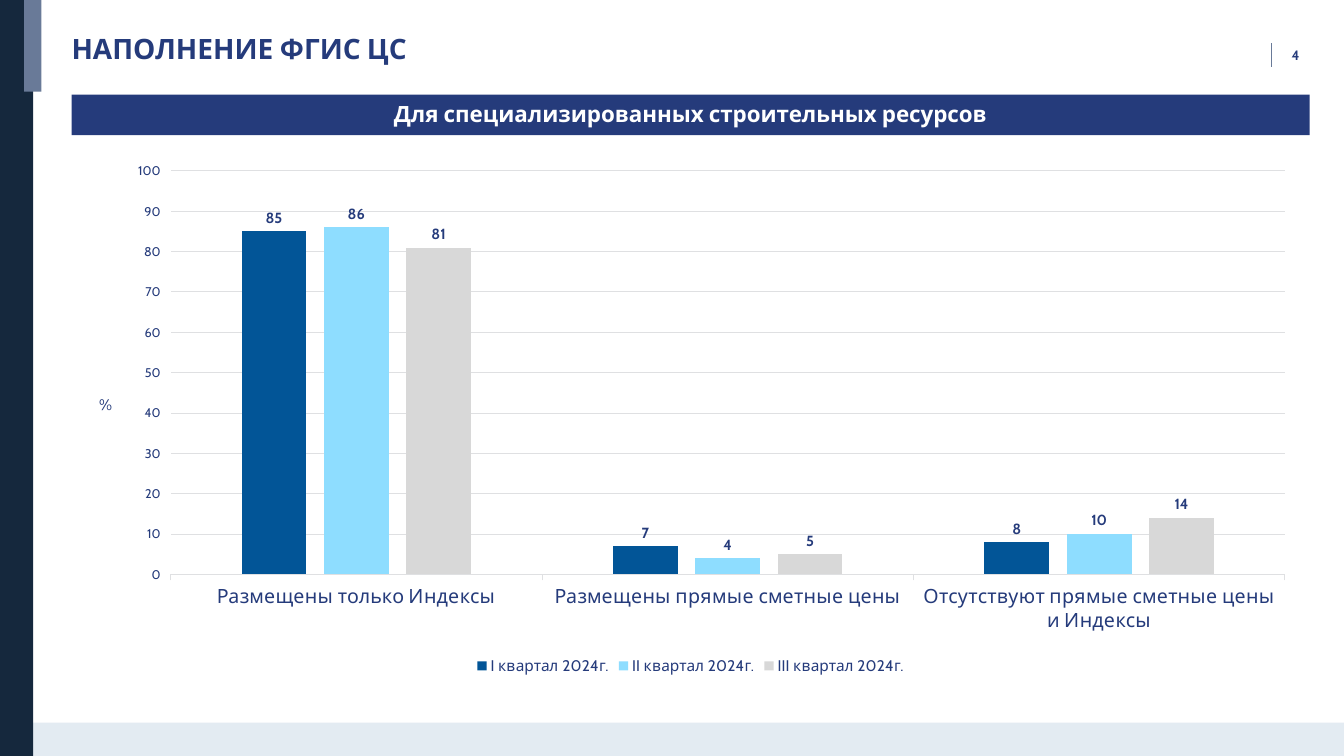
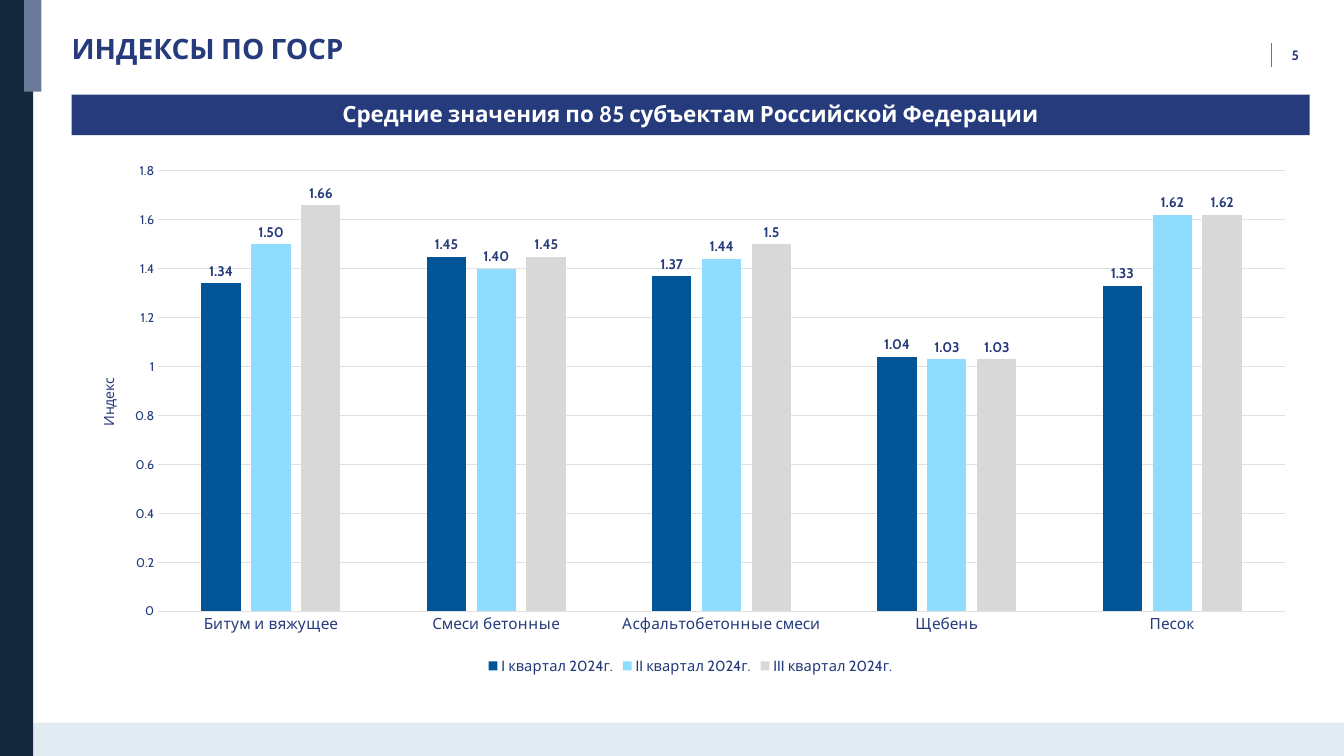
from lxml import etree
from pptx import Presentation
from pptx import util as u
from pptx.chart.data import CategoryChartData
from pptx.dml.color import RGBColor
from pptx.enum import chart as ch, shapes, text
from pptx.oxml.ns import qn

FONT = "Cabin"
COLORS = {
    "navy": "253B7B", "rail": "15283D", "slate": "697A98", "footer": "E3EBF2",
    "white": "FFFFFF", "grid": "DFE0E2", "ink": "303236",
}
QUARTERS = {
    "I квартал 2024г.": "025597",
    "II квартал 2024г.": "8EDDFF",
    "III квартал 2024г.": "D8D8D8",
}

# Layout in inches: left, top, width, height
WIDTH, HEIGHT = 13.33, 7.5
LEFT, CONTENT_WIDTH = 0.71, 12.28
RAIL_WIDTH, FOOTER_HEIGHT = 0.33, 0.33
TITLE_BOX = (LEFT, 0.31, 9.64, 0.34)
BAND_BOX = (LEFT, 0.94, CONTENT_WIDTH, 0.4)
CHART_BOX = (LEFT, 1.54, CONTENT_WIDTH, 5.2)
NUMBER_BOX = (12.68, 0.46, 0.68, 0.17)

SLIDES = [
    {
        "title": "НАПОЛНЕНИЕ ФГИС ЦС",
        "heading": "Для специализированных строительных ресурсов",
        "number": 4,
        "categories": ["Размещены только Индексы", "Размещены прямые сметные цены",
                       "Отсутствуют прямые сметные цены и Индексы"],
        "values": [(85, 7, 8), (86, 4, 10), (81, 5, 14)],
        "formats": ["General"] * 3,
        "maximum": 100, "step": 10, "tick": ch.XL_TICK_MARK.OUTSIDE,
        "category_size": 14, "legend_size": 11, "label_size": 10.5,
        "axis_title": "%", "axis_title_size": 11, "axis_title_turn": 0,
        "axis_title_place": {"x": 0.02, "y": 0.45},
        "plot": {"x": 0.08, "y": 0.03, "w": 0.9, "h": 0.77},
    },
    {
        "title": "ИНДЕКСЫ ПО ГОСР",
        "heading": "Средние значения по 85 субъектам Российской Федерации",
        "number": 5,
        "categories": ["Битум и вяжущее", "Смеси бетонные",
                       "Асфальтобетонные смеси", "Щебень", "Песок"],
        "values": [(1.34, 1.45, 1.37, 1.04, 1.33), (1.5, 1.4, 1.44, 1.03, 1.62),
                   (1.66, 1.45, 1.5, 1.03, 1.62)],
        "formats": ["General", "0.00", "General"],
        "maximum": 1.8, "step": 0.2, "tick": ch.XL_TICK_MARK.NONE,
        "category_size": 11, "legend_size": 10.5, "label_size": 10,
        "axis_title": "Индекс", "axis_title_size": 10, "axis_title_turn": -90,
        "axis_title_place": {"x": 0.02, "y": 0.42},
        "plot": {"x": 0.07, "y": 0.03, "w": 0.91, "h": 0.84},
    },
]


def rgb(name):
    return RGBColor.from_string(COLORS.get(name, name))


def inches(box):
    return [u.Inches(length) for length in box]


def style_font(font, size, color="navy", bold=False):
    font.name = FONT
    font.size = u.Pt(size)
    font.bold = bold
    font.color.rgb = rgb(color)


def add_rectangle(slide, box, color):
    shape = slide.shapes.add_shape(shapes.MSO_SHAPE.RECTANGLE, *inches(box))
    shape.shadow.inherit = False
    shape.fill.solid()
    shape.fill.fore_color.rgb = rgb(color)
    shape.line.fill.background()
    return shape


def write_text(shape, words, size, color="navy", inset=0.0):
    """Put one bold line in a shape and return its paragraph."""
    frame = shape.text_frame
    frame.word_wrap = True
    frame.margin_left = frame.margin_right = u.Inches(inset)
    frame.margin_top = frame.margin_bottom = 0
    paragraph = frame.paragraphs[0]
    paragraph.text = words
    style_font(paragraph.font, size, color, bold=True)
    return paragraph


def add_frame(slide, number):
    """Footer, side rail with its tab, and the page number with its divider."""
    add_rectangle(slide, (0, HEIGHT - FOOTER_HEIGHT, WIDTH, FOOTER_HEIGHT), "footer")
    add_rectangle(slide, (0, 0, RAIL_WIDTH, HEIGHT), "rail")
    add_rectangle(slide, (0.24, 0, 0.17, 0.91), "slate")

    divider = slide.shapes.add_connector(
        shapes.MSO_CONNECTOR.STRAIGHT, *inches((12.61, 0.43, 12.61, 0.66)))
    divider.line.color.rgb = rgb("slate")
    divider.line.width = u.Pt(1)
    etree.SubElement(divider._element.spPr, qn("a:effectLst"))

    page_number = slide.shapes.add_textbox(*inches(NUMBER_BOX))
    write_text(page_number, str(number), 9.7, inset=0.13)
    page_number.text_frame.vertical_anchor = text.MSO_ANCHOR.MIDDLE


def add_title(slide, words, box):
    write_text(slide.shapes.add_textbox(*inches(box)), words, 20)


def add_heading_band(slide, words, box):
    band = add_rectangle(slide, box, "navy")
    paragraph = write_text(band, words, 16, "white", inset=0.18)
    paragraph.alignment = text.PP_ALIGN.CENTER
    paragraph.line_spacing = u.Pt(17.9)
    band.text_frame.vertical_anchor = text.MSO_ANCHOR.MIDDLE


def set_layout(parent, shares, inner=False):
    """Place a chart part by shares of the chart's size."""
    layout = parent.find(qn("c:layout"))
    if layout is None:
        layout = etree.Element(qn("c:layout"))
        parent.insert(0, layout)
    for child in list(layout):
        layout.remove(child)
    manual = etree.SubElement(layout, qn("c:manualLayout"))
    settings = {"layoutTarget": "inner"} if inner else {}
    settings.update(xMode="edge", yMode="edge", **shares)
    for tag, value in settings.items():
        etree.SubElement(manual, qn("c:" + tag)).set("val", str(value))


def style_value_axis(axis, content):
    axis.minimum_scale = 0
    axis.maximum_scale = content["maximum"]
    axis.major_unit = content["step"]
    axis.major_tick_mark = content["tick"]
    axis.format.line.fill.background()
    axis.has_major_gridlines = True
    grid_line = axis.major_gridlines.format.line
    grid_line.color.rgb = rgb("grid")
    grid_line.width = u.Pt(0.75)
    style_font(axis.tick_labels.font, 9)
    axis.tick_labels.number_format = "General"
    axis.tick_labels.number_format_is_linked = False

    paragraph = axis.axis_title.text_frame.paragraphs[0]
    paragraph.text = content["axis_title"]
    style_font(paragraph.font, content["axis_title_size"])
    title = axis.axis_title._element
    body = title.find(".//" + qn("a:bodyPr"))
    body.set("rot", str(content["axis_title_turn"] * 60000))
    body.set("vert", "horz")
    set_layout(title, content["axis_title_place"])


def style_category_axis(axis, content):
    axis.major_tick_mark = content["tick"]
    axis.format.line.color.rgb = rgb("grid")
    axis.format.line.width = u.Pt(0.75)
    style_font(axis.tick_labels.font, content["category_size"])


def style_series(series, color, number_format, label_size):
    series.format.fill.solid()
    series.format.fill.fore_color.rgb = rgb(color)
    series.invert_if_negative = False
    labels = series.data_labels
    labels.show_value = True
    labels.position = ch.XL_LABEL_POSITION.OUTSIDE_END
    labels.number_format = number_format
    labels.number_format_is_linked = False
    style_font(labels.font, label_size, bold=True)


def add_column_chart(slide, content, box):
    data = CategoryChartData()
    data.categories = content["categories"]
    for name, values in zip(QUARTERS, content["values"]):
        data.add_series(name, values)
    chart = slide.shapes.add_chart(
        ch.XL_CHART_TYPE.COLUMN_CLUSTERED, *inches(box), data).chart
    style_font(chart.font, 10, "ink")
    chart.has_title = False

    # Columns
    plot = chart.plots[0]
    plot.gap_width = 219
    plot.overlap = -27
    plot.vary_by_categories = False
    for series, color, number_format in zip(
            plot.series, QUARTERS.values(), content["formats"]):
        style_series(series, color, number_format, content["label_size"])

    # Axes and plot area
    style_category_axis(chart.category_axis, content)
    style_value_axis(chart.value_axis, content)
    set_layout(chart._chartSpace.find(".//" + qn("c:plotArea")), content["plot"], inner=True)

    # Legend
    chart.has_legend = True
    chart.legend.position = ch.XL_LEGEND_POSITION.BOTTOM
    chart.legend.include_in_layout = False
    style_font(chart.legend.font, content["legend_size"])


def add_chart_slide(presentation, content):
    slide = presentation.slides.add_slide(presentation.slide_layouts[6])
    add_frame(slide, content["number"])
    add_title(slide, content["title"], TITLE_BOX)
    add_heading_band(slide, content["heading"], BAND_BOX)
    add_column_chart(slide, content, CHART_BOX)


def main():
    presentation = Presentation()
    presentation.slide_width = u.Inches(WIDTH)
    presentation.slide_height = u.Inches(HEIGHT)
    for content in SLIDES:
        add_chart_slide(presentation, content)
    presentation.save("out.pptx")


if __name__ == "__main__":
    main()
